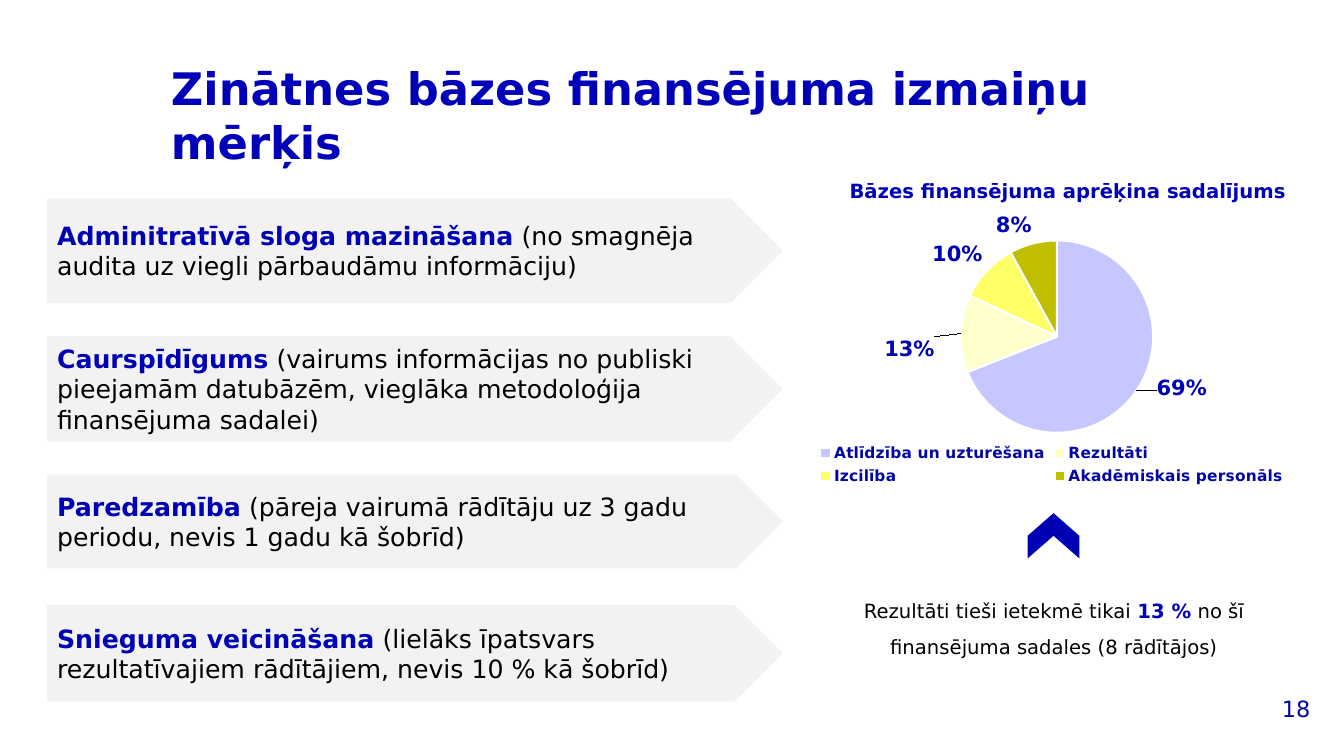
from dataclasses import dataclass

from lxml.etree import SubElement
from pptx import Presentation
from pptx.chart.data import CategoryChartData
from pptx.dml.color import RGBColor
from pptx.enum.chart import XL_CHART_TYPE, XL_LABEL_POSITION, XL_LEGEND_POSITION
from pptx.enum.shapes import MSO_SHAPE
from pptx.enum.text import MSO_ANCHOR, PP_ALIGN
from pptx.oxml.ns import qn
from pptx.util import Cm, Pt


@dataclass(frozen=True)
class Theme:
    """Colours, typeface and type sizes of the slide."""
    font: str = "DejaVu Sans"
    title: str = "0000B8"
    accent: str = "0001B4"
    muted: str = "0206A4"
    ink: str = "000000"
    panel: str = "F2F2F2"
    paper: str = "FFFFFF"
    slices: tuple = ("C6C7FE", "FFFFCC", "FFFF66", "BFBF00")
    title_size: int = 32
    body_size: int = 18
    number_size: int = 16
    label_size: int = 15
    note_size: int = 14
    legend_size: int = 11
    chart_size: int = 10


def set_font(font, family, size, color, bold=False):
    """Apply one format to a font."""
    font.name, font.size, font.bold = family, Pt(size), bold
    font.color.rgb = RGBColor.from_string(color)


def add_span(para, text, **style):
    """Append a formatted run of text to a paragraph."""
    span = para.add_run()
    span.text = text
    set_font(span.font, **style)


def add_layout(parent, position, inner=False, **fractions):
    """Insert a manual chart layout given as fractions of the chart."""
    for old in parent.findall(qn("c:layout")):
        parent.remove(old)
    layout = SubElement(parent, qn("c:layout"))
    parent.insert(position, layout)
    manual = SubElement(layout, qn("c:manualLayout"))
    if inner:
        for tag, value in (("layoutTarget", "inner"), ("xMode", "edge"), ("yMode", "edge")):
            SubElement(manual, qn(f"c:{tag}")).set("val", value)
    for tag, value in fractions.items():
        SubElement(manual, qn(f"c:{tag}")).set("val", str(value))


class SlideBuilder:
    """Draws styled elements on the current slide."""

    def __init__(self, page, theme):
        """Keep the slide and its theme."""
        self.page, self.theme = page, theme

    def fill_text(self, frame, paragraphs, size, align=PP_ALIGN.LEFT,
                  anchor=MSO_ANCHOR.TOP, spacing=None, wrap=True):
        """Write paragraphs made of (text, colour, bold) spans."""
        frame.word_wrap, frame.vertical_anchor = wrap, anchor
        for index, spans in enumerate(paragraphs):
            para = frame.add_paragraph() if index else frame.paragraphs[0]
            para.alignment = align
            if spacing:
                para.line_spacing = spacing
            for text, color, bold in spans:
                add_span(para, text, family=self.theme.font, size=size, color=color, bold=bold)

    def text(self, area, paragraphs, size, **style):
        """Add a text box."""
        box = self.page.shapes.add_textbox(*map(Cm, area))
        self.fill_text(box.text_frame, paragraphs, size, **style)

    def shape(self, kind, area, color, rotation=0):
        """Add a flat preset shape."""
        shape = self.page.shapes.add_shape(kind, *map(Cm, area))
        shape.shadow.inherit = False
        shape.fill.solid()
        shape.fill.fore_color.rgb = RGBColor.from_string(color)
        shape.line.fill.background()
        shape.rotation = rotation
        return shape

    def goal(self, top, height, heading, detail):
        """Add a pentagon with a bold heading and its explanation."""
        theme = self.theme
        panel = self.shape(MSO_SHAPE.PENTAGON, (1.19, top, 18.54, height), theme.panel)
        spans = [(heading, theme.accent, True), (f" ({detail})", theme.ink, False)]
        self.fill_text(panel.text_frame, [spans], theme.body_size, anchor=MSO_ANCHOR.MIDDLE)

    def pie(self, area, shares, label_shifts):
        """Add the pie chart with percentages and a legend."""
        theme = self.theme
        data = CategoryChartData()
        data.categories = list(shares)
        data.add_series("Series 1", list(shares.values()))
        chart = self.page.shapes.add_chart(XL_CHART_TYPE.PIE, *map(Cm, area), data).chart
        set_font(chart.font, theme.font, theme.chart_size, theme.ink)
        chart.has_title = False
        chart.has_legend = True
        chart.legend.position = XL_LEGEND_POSITION.BOTTOM
        chart.legend.include_in_layout = False
        set_font(chart.legend.font, theme.font, theme.legend_size, theme.muted, True)

        plot = chart.plots[0]
        plot.vary_by_categories = True
        series = plot.series[0]
        labels = series.data_labels
        labels.show_percentage, labels.show_value = True, False
        labels.position = XL_LABEL_POSITION.OUTSIDE_END
        set_font(labels.font, theme.font, theme.label_size, theme.accent, True)
        for index, color in enumerate(theme.slices):
            point = series.points[index]
            point.format.fill.solid()
            point.format.fill.fore_color.rgb = RGBColor.from_string(color)
            point.format.line.color.rgb = RGBColor.from_string(theme.paper)
            point.format.line.width = Pt(1.5)
        for index, (across, down) in label_shifts.items():
            label = series.points[index].data_label
            label.position = XL_LABEL_POSITION.OUTSIDE_END
            set_font(label.font, theme.font, theme.label_size, theme.accent, True)
        for node in series._element.iter(qn("c:dLbl")):
            node.find(qn("c:showVal")).set("val", "0")
            node.find(qn("c:showPercent")).set("val", "1")
            across, down = label_shifts[int(node.find(qn("c:idx")).get("val"))]
            add_layout(node, 1, x=across, y=down)
        plot_area = next(chart.element.iter(qn("c:plotArea"))) if hasattr(chart, "element") \
            else next(chart._chartSpace.iter(qn("c:plotArea")))
        add_layout(plot_area, 0, inner=True, x=0.32, y=0.21, w=0.38, h=0.61)


def main():
    """Build and save the slide."""
    deck = Presentation()
    deck.slide_width, deck.slide_height = Cm(33.87), Cm(19.05)
    theme = Theme()
    builder = SlideBuilder(deck.slides.add_slide(deck.slide_layouts[6]), theme)

    builder.text((4.06, 1.4, 24.23, 2.77),
                 [[("Zinātnes bāzes finansējuma izmaiņu mērķis", theme.title, True)]],
                 theme.title_size)
    goals = (
        (5.0, 2.64, "Adminitratīvā sloga mazināšana",
         "no smagnēja audita uz viegli pārbaudāmu informāciju"),
        (8.48, 2.64, "Caurspīdīgums",
         "vairums informācijas no publiski pieejamām datubāzēm, "
         "vieglāka metodoloģija finansējuma sadalei"),
        (11.96, 2.36, "Paredzamība",
         "pāreja vairumā rādītāju uz 3 gadu periodu, nevis 1 gadu kā šobrīd"),
        (15.24, 2.44, "Snieguma veicināšana",
         "lielāks īpatsvars rezultatīvajiem rādītājiem, nevis 10 % kā šobrīd"),
    )
    for goal in goals:
        builder.goal(*goal)

    shares = {"Atlīdzība un uzturēšana": 69, "Rezultāti": 13,
              "Izcilība": 10, "Akadēmiskais personāls": 8}
    builder.pie((20.12, 4.39, 12.78, 7.95), shares, {0: (0.03, -0.06), 1: (-0.04, 0.05)})
    builder.text((21.16, 4.39, 11.61, 0.86),
                 [[("Bāzes finansējuma aprēķina sadalījums", theme.accent, True)]],
                 theme.note_size, wrap=False)
    builder.shape(MSO_SHAPE.CHEVRON, (25.98, 12.85, 1.14, 1.3), theme.accent, rotation=270)
    builder.text((21.16, 14.68, 10.8, 2.06),
                 [[("Rezultāti tieši ietekmē tikai ", theme.ink, False),
                   ("13 %", theme.accent, True), (" no šī", theme.ink, False)],
                  [("finansējuma sadales (8 rādītājos)", theme.ink, False)]],
                 theme.note_size, align=PP_ALIGN.CENTER, spacing=1.5)
    builder.text((25.65, 17.35, 7.62, 1.02), [[("18", theme.muted, False)]],
                 theme.number_size, align=PP_ALIGN.RIGHT, anchor=MSO_ANCHOR.MIDDLE)
    deck.save("out.pptx")


if __name__ == "__main__":
    main()
